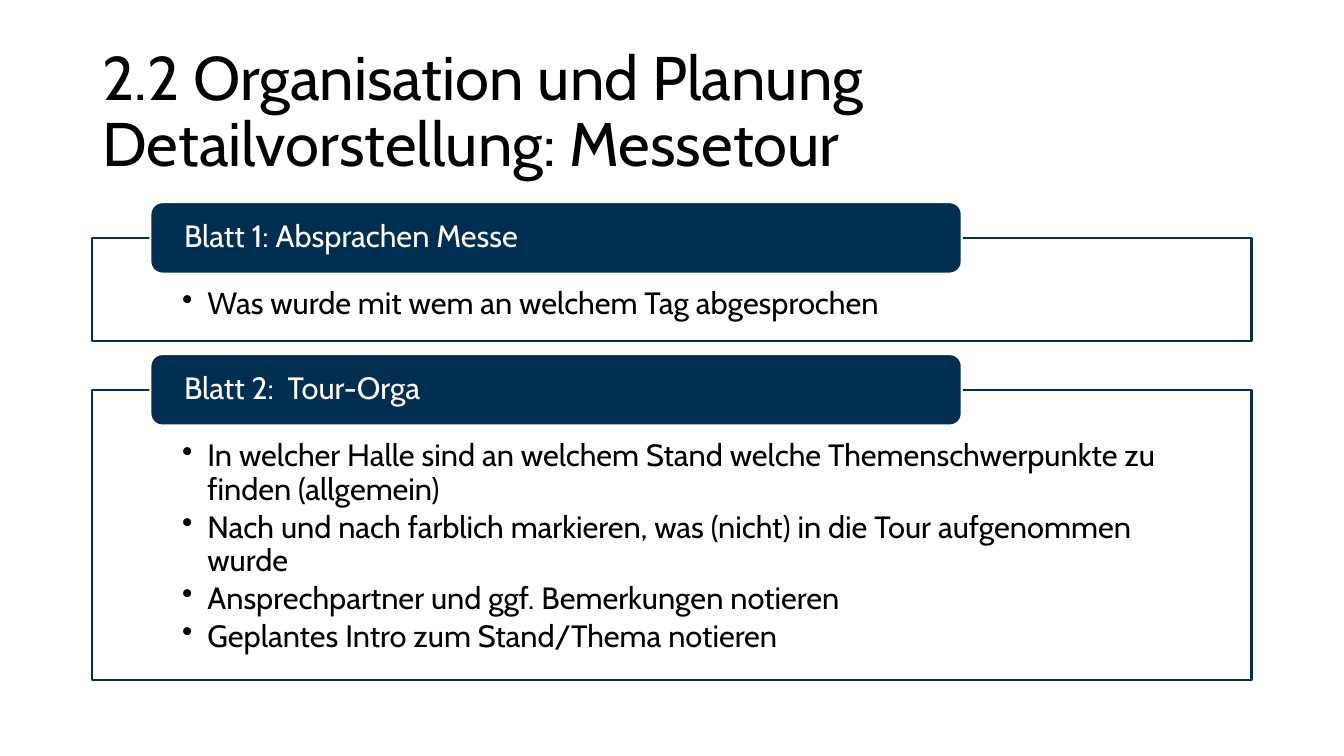
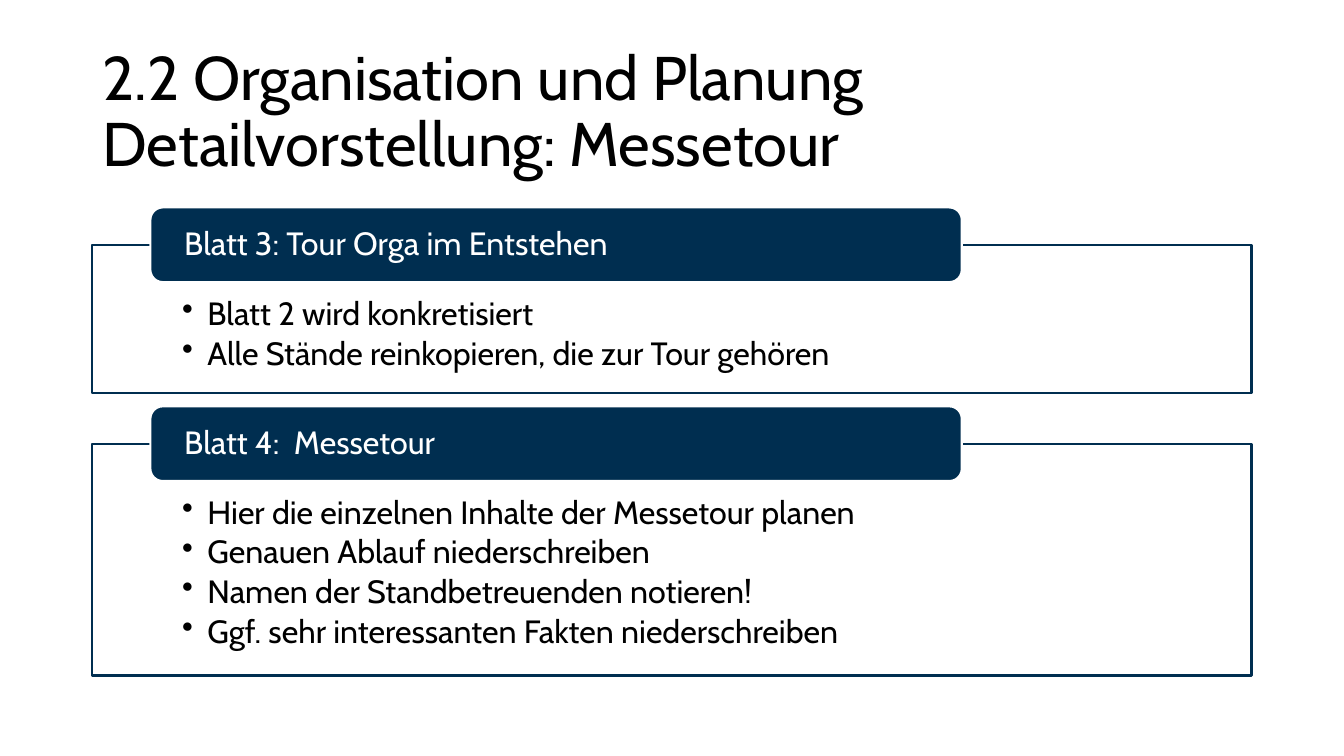
from pptx import Presentation
from pptx.dml.color import RGBColor as RGB
from pptx.enum.shapes import MSO_SHAPE as Shape
from pptx.enum.text import MSO_ANCHOR as Anchor, PP_ALIGN as Align
from pptx.oxml.ns import qn
from pptx.util import Pt
from lxml.etree import SubElement as Sub

FONT = "Cabin"
HUES = {"navy": "002E50", "white": "FFFFFF", "black": "000000"}
TITLE = "2.2 Organisation und Planung\vDetailvorstellung: Messetour"
LEFT, WIDTH = 66, 828
GAP = 9.6        # between one frame and the next tab
TAB = 2.32       # tab height per point of text size

# Per slide: text size, top of the stack, then (heading, frame height, bullets)
SLIDES = [
    (22, 144.4, [
        ("Blatt 1: Absprachen Messe", 73.4, [
            "Was wurde mit wem an welchem Tag abgesprochen",
        ]),
        ("Blatt 2:  Tour-Orga", 207.4, [
            "In welcher Halle sind an welchem Stand welche "
            "Themenschwerpunkte zu finden (allgemein)",
            "Nach und nach farblich markieren, was (nicht) in die Tour "
            "aufgenommen wurde",
            "Ansprechpartner und ggf. Bemerkungen notieren",
            "Geplantes Intro zum Stand/Thema notieren",
        ]),
    ]),
    (23, 148.2, [
        ("Blatt 3: Tour Orga im Entstehen", 105.8, [
            "Blatt 2 wird konkretisiert",
            "Alle Stände reinkopieren, die zur Tour gehören",
        ]),
        ("Blatt 4:  Messetour", 165.6, [
            "Hier die einzelnen Inhalte der Messetour planen",
            "Genauen Ablauf niederschreiben",
            "Namen der Standbetreuenden notieren!",
            "Ggf. sehr interessanten Fakten niederschreiben",
        ]),
    ]),
]


def hue(name):
    return RGB.from_string(HUES[name])


def write(shape, lines, size, ink, pad, anchor=Anchor.MIDDLE, dots=False):
    """Fill a shape with paragraphs; pad is left, top, right, bottom."""
    frame = shape.text_frame
    frame.word_wrap = True
    frame.vertical_anchor = anchor
    frame.margin_left, frame.margin_top = Pt(pad[0]), Pt(pad[1])
    frame.margin_right, frame.margin_bottom = Pt(pad[2]), Pt(pad[3])
    for i, line in enumerate(lines):
        par = frame.add_paragraph() if i else frame.paragraphs[0]
        par.text = line
        par.alignment = Align.LEFT
        par.line_spacing = 0.9
        if dots:
            par.level = 1
            par.space_after = Pt(round(0.15 * size, 2))
            props = par._p.get_or_add_pPr()
            props.set("marL", str(Pt(18)))
            props.set("indent", str(Pt(-18)))
            Sub(props, qn("a:buChar"), char="•")
        font = par.font
        font.name, font.size = FONT, Pt(size)
        font.color.rgb = hue(ink)


def block(slide, kind, x, y, w, h, fill, edge):
    shape = slide.shapes.add_shape(kind, Pt(x), Pt(y), Pt(w), Pt(h))
    shape.shadow.inherit = False
    shape.fill.solid()
    shape.fill.fore_color.rgb = hue(fill)
    shape.line.color.rgb = hue(edge)
    shape.line.width = Pt(1.5)
    return shape


def title(slide, x, y, w, h):
    box = slide.shapes.add_textbox(Pt(x), Pt(y), Pt(w), Pt(h))
    write(box, [TITLE], 44, "black", (7.2, 3.6, 7.2, 3.6))


def sheet(slide, x, y, w, h, size, head, points):
    """Outlined frame with a heading tab straddling its top edge."""
    tab = TAB * size
    # Frame with bullets
    body = block(slide, Shape.RECTANGLE, x, y + tab / 2, w, h, "white", "navy")
    tint = body.fill._xPr.find(qn("a:solidFill"))[0]
    Sub(tint, qn("a:alpha"), val="90000")
    side = 64.2
    write(body, points, size, "black", (side, 1.64 * size, side, 12.5),
          Anchor.TOP, dots=True)
    # Heading tab
    label = block(slide, Shape.ROUNDED_RECTANGLE, x + w * 0.05, y, w * 0.7,
                  tab, "navy", "white")
    write(label, [head], size, "white", (21.6, 0, 21.6, 0))
    return y + tab / 2 + h


def stack(slide, x, y, w, size, sheets):
    for head, high, points in sheets:
        y = sheet(slide, x, y, w, high, size, head, points) + GAP


def main():
    deck = Presentation()
    deck.slide_width, deck.slide_height = Pt(960), Pt(540)
    for size, top, sheets in SLIDES:
        slide = deck.slides.add_slide(deck.slide_layouts[6])
        title(slide, LEFT, 28.75, WIDTH, 104.4)
        stack(slide, LEFT, top, WIDTH, size, sheets)
    deck.save("out.pptx")


if __name__ == "__main__":
    main()
